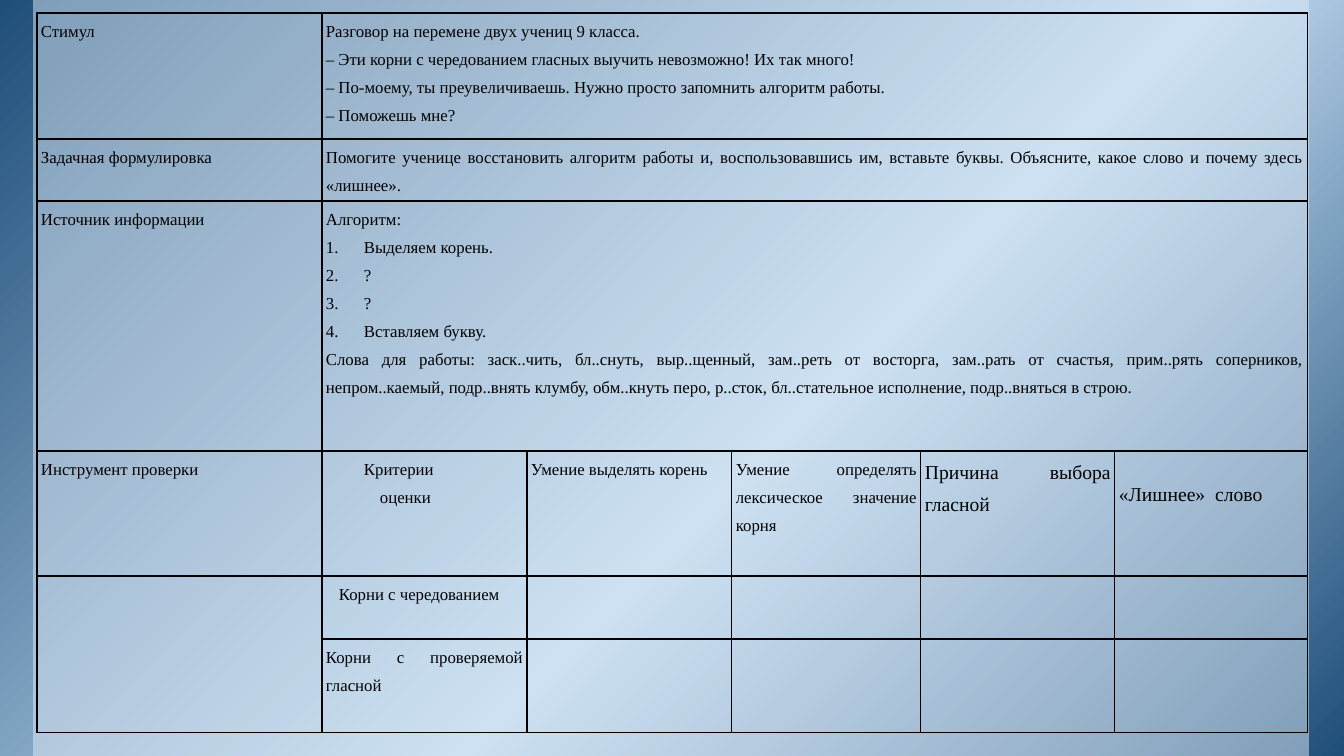
from copy import deepcopy
from dataclasses import dataclass

from lxml import etree
from pptx import Presentation
from pptx.dml.color import RGBColor
from pptx.enum.shapes import MSO_SHAPE
from pptx.enum.text import PP_ALIGN
from pptx.oxml.ns import qn
from pptx.util import Emu, Pt

RECTANGLE = MSO_SHAPE.RECTANGLE
JUSTIFY = PP_ALIGN.JUSTIFY
NAVY = RGBColor(0x1F, 0x4E, 0x79)
SKY = RGBColor(0xBD, 0xD7, 0xEE)
PALE = RGBColor(0xDE, 0xEB, 0xF7)
BLACK = RGBColor(0, 0, 0)

PX = 914400 / 100.8
SLIDE_BOX = (0, 0, 1344, 756)
PANEL_BOX = (33, 0, 1276, 756)
TABLE_BOX = (37, 13, 1271, 720)
COLUMN_WIDTHS = (285, 205, 205, 189, 194, 193)
ROW_HEIGHTS = (126, 62, 250, 125, 63, 94)
MERGES = [((0, 1), (0, 5)), ((1, 1), (1, 5)), ((2, 1), (2, 5)), ((4, 0), (5, 0))]
CELL_MARGIN = 4
NUMBER_INDENT = 38
GRADIENT = ((0, NAVY), (0.58, SKY), (1, NAVY))


@dataclass
class Line:
    """One paragraph of a table cell."""
    text: str
    indent: int = 0
    size: int = 12
    numbered: bool = False


def step(text):
    """Return a numbered step of the algorithm."""
    return Line(text, NUMBER_INDENT, numbered=True)


CELLS = {
    (0, 0): [Line("Стимул")],
    (0, 1): [
        Line("Разговор на перемене двух учениц 9 класса."),
        Line("– Эти корни с чередованием гласных выучить невозможно! Их так много!"),
        Line("– По-моему, ты преувеличиваешь. Нужно просто запомнить алгоритм работы."),
        Line("– Поможешь мне?"),
    ],
    (1, 0): [Line("Задачная формулировка")],
    (1, 1): [Line("Помогите ученице восстановить алгоритм работы и, воспользовавшись им, "
                  "вставьте буквы. Объясните, какое слово и почему здесь «лишнее».")],
    (2, 0): [Line("Источник информации")],
    (2, 1): [
        Line("Алгоритм:"),
        step("Выделяем корень."),
        step("?"),
        step("?"),
        step("Вставляем букву."),
        Line("Слова для работы: заск..чить, бл..снуть, выр..щенный, зам..реть от восторга, "
             "зам..рать от счастья, прим..рять соперников, непром..каемый, подр..внять клумбу, "
             "обм..кнуть перо, р..сток, бл..стательное исполнение, подр..вняться в строю."),
    ],
    (3, 0): [Line("Инструмент проверки")],
    (3, 1): [Line("Критерии", 38), Line("оценки", 54)],
    (3, 2): [Line("Умение выделять корень")],
    (3, 3): [Line("Умение определять лексическое значение корня")],
    (3, 4): [Line("Причина выбора гласной", size=14)],
    (3, 5): [Line("«Лишнее»  слово", size=14)],
    (4, 1): [Line("Корни с чередованием", 13)],
    (5, 1): [Line("Корни с проверяемой гласной")],
}
TOP_MARGINS = {(3, 5): 22}


def px(length):
    """Turn px into EMU."""
    return Emu(round(length * PX))


def apply_format(target, values):
    """Set each attribute of the target from a dict."""
    for name, value in values.items():
        setattr(target, name, value)


def add_rectangle(page, box):
    """Add a rectangle without line or shadow."""
    shape = page.shapes.add_shape(RECTANGLE, *map(px, box))
    shape.shadow.inherit = False
    shape.line.fill.background()
    return shape


def add_backdrop(page, box, panel_box):
    """Draw the diagonal gradient and the translucent panel over it."""
    backdrop = add_rectangle(page, box)
    fill = backdrop.fill
    fill.gradient()
    fill.gradient_angle = 315
    stop_list = next(backdrop.element.iter(qn("a:gsLst")))
    stop_list.append(deepcopy(stop_list[0]))
    for stop, (position, color) in zip(fill.gradient_stops, GRADIENT):
        stop.position = position
        stop.color.rgb = color

    panel = add_rectangle(page, panel_box)
    panel.fill.solid()
    panel.fill.fore_color.rgb = PALE
    color = next(panel.element.spPr.iter(qn("a:srgbClr")))
    etree.SubElement(color, qn("a:alpha"), val="50000")


def add_borders(cell):
    """Give all four sides of a cell a thin black line."""
    properties = cell._tc.get_or_add_tcPr()
    for side in ("lnL", "lnR", "lnT", "lnB"):
        border = etree.SubElement(properties, qn(f"a:{side}"), w=str(Pt(1)))
        solid = etree.SubElement(border, qn("a:solidFill"))
        etree.SubElement(solid, qn("a:srgbClr"), val=str(BLACK))


def write_line(para, line):
    """Write one line of text into a paragraph."""
    properties = para._p.get_or_add_pPr()
    if line.numbered:
        properties.set("marL", str(px(line.indent)))
        properties.set("indent", str(px(-line.indent)))
        etree.SubElement(properties, qn("a:buAutoNum"), type="arabicPeriod")
    elif line.indent:
        properties.set("indent", str(px(line.indent)))
    apply_format(para, {"alignment": JUSTIFY, "line_spacing": 1.5})
    span = para.add_run()
    span.text = line.text
    apply_format(span.font, {"name": "Times New Roman", "size": Pt(line.size)})
    span.font.color.rgb = BLACK


def fill_cell(cell, lines, top):
    """Format a cell and write its lines."""
    add_borders(cell)
    cell.fill.background()
    apply_format(cell, {"margin_left": px(CELL_MARGIN), "margin_right": px(CELL_MARGIN),
                        "margin_top": px(top), "margin_bottom": 0})
    frame = cell.text_frame
    for index, line in enumerate(lines):
        para = frame.add_paragraph() if index else frame.paragraphs[0]
        write_line(para, line)


def add_task_table(page, box):
    """Add the table that describes the task."""
    frame = page.shapes.add_table(len(ROW_HEIGHTS), len(COLUMN_WIDTHS), *map(px, box))
    table = frame.table
    apply_format(table, {"first_row": False, "horz_banding": False})
    for column, width in zip(table.columns, COLUMN_WIDTHS):
        column.width = px(width)
    for row, height in zip(table.rows, ROW_HEIGHTS):
        row.height = px(height)
    for first, last in MERGES:
        table.cell(*first).merge(table.cell(*last))
    for row in range(len(ROW_HEIGHTS)):
        for column in range(len(COLUMN_WIDTHS)):
            place = (row, column)
            fill_cell(table.cell(*place), CELLS.get(place, []), TOP_MARGINS.get(place, 0))


def main():
    """Build the deck and save it."""
    deck = Presentation()
    deck.slide_width, deck.slide_height = map(px, SLIDE_BOX[2:])
    page = deck.slides.add_slide(deck.slide_layouts[6])
    add_backdrop(page, SLIDE_BOX, PANEL_BOX)
    add_task_table(page, TABLE_BOX)
    deck.save("out.pptx")


if __name__ == "__main__":
    main()
